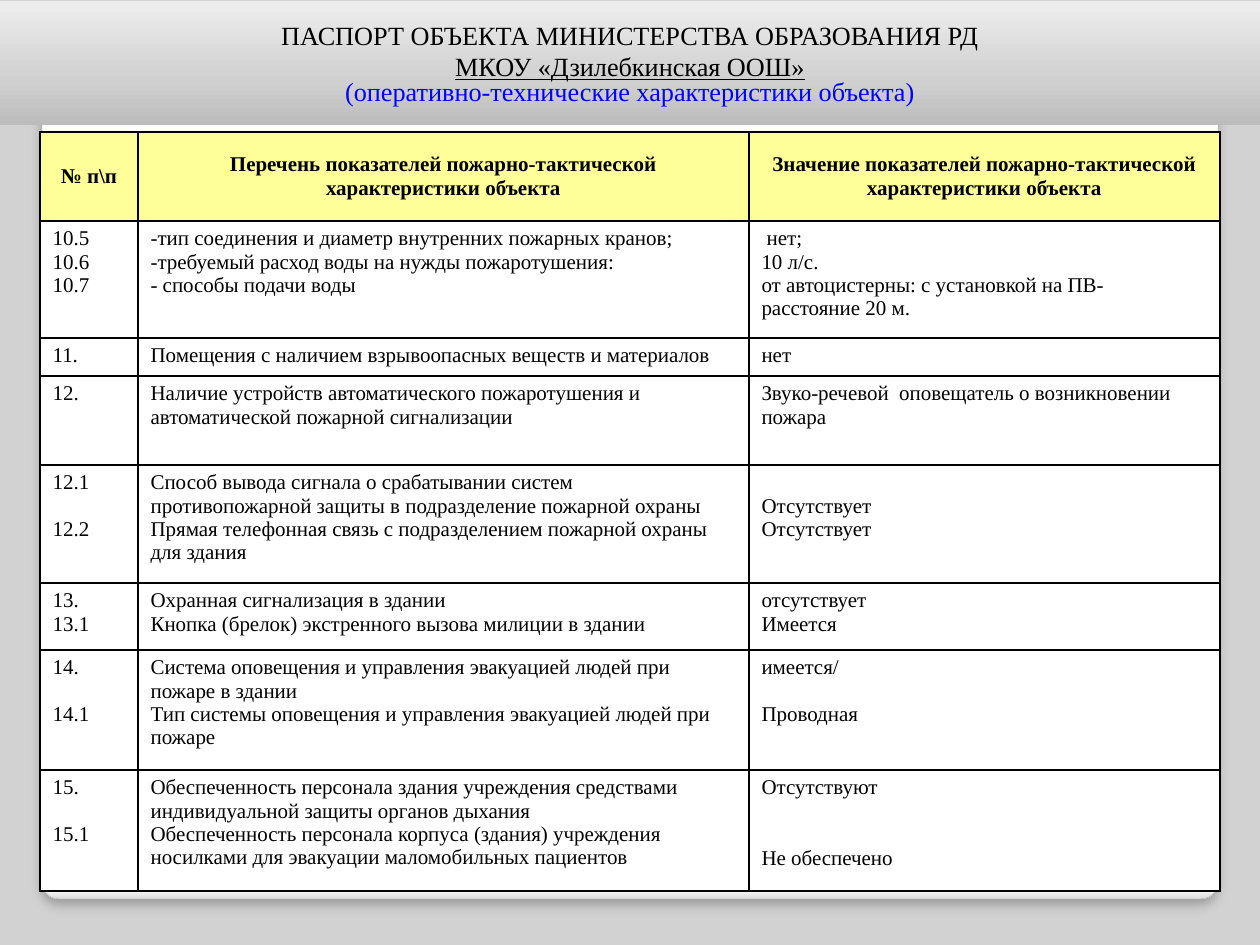
"""Builds the fire-safety passport slide: title banner and table of indicators."""
from lxml import etree
from pptx import Presentation
from pptx import util as u
from pptx.dml.color import RGBColor
from pptx.enum import shapes, text
from pptx.oxml import parse_xml
from pptx.oxml.ns import qn

BLACK = RGBColor(0, 0, 0)
BLUE = RGBColor(0, 0, 255)
WHITE = RGBColor(255, 255, 255)
YELLOW = RGBColor(255, 255, 153)
GREY = RGBColor(210, 210, 210)
EDGE = RGBColor(164, 164, 164)
FONT = "Times New Roman"
NS = 'xmlns:a="http://schemas.openxmlformats.org/drawingml/2006/main"'
BULLET = "•"
GAP = 13.5

TITLE = [
    ("ПАСПОРТ ОБЪЕКТА МИНИСТЕРСТВА ОБРАЗОВАНИЯ РД", BLACK, False, 1.0),
    ("МКОУ «Дзилебкинская ООШ»", BLACK, True, 1.0),
    ("(оперативно-технические характеристики объекта)", BLUE, False, 0.8),
]
COLS = [98, 611, 471]
ROWS = [
    (89, ["№ п\\п"],
     ["Перечень показателей пожарно-тактической характеристики объекта"],
     ["Значение показателей пожарно-тактической характеристики объекта"]),
    (117, ["10.5", "10.6", "10.7"],
     ["-тип соединения и диаметр внутренних пожарных кранов;",
      "•требуемый расход воды на нужды пожаротушения:",
      "• способы подачи воды"],
     [" нет;", "10 л/с.",
      "от автоцистерны: с установкой на ПВ- расстояние 20 м."]),
    (38, ["11."],
     ["Помещения с наличием взрывоопасных веществ и материалов"],
     ["нет"]),
    (89, ["12."],
     ["Наличие устройств автоматического пожаротушения и "
      "автоматической пожарной сигнализации"],
     ["Звуко-речевой  оповещатель о возникновении пожара"]),
    (118, ["12.1", "", "12.2"],
     ["Способ вывода сигнала о срабатывании систем противопожарной "
      "защиты в подразделение пожарной охраны",
      "Прямая телефонная связь с подразделением пожарной охраны для здания"],
     ["", "Отсутствует", "Отсутствует"]),
    (67, ["13.", "13.1"],
     ["Охранная сигнализация в здании",
      "Кнопка (брелок) экстренного вызова милиции в здании"],
     ["отсутствует", "Имеется"]),
    (120, ["14.", "", "14.1"],
     ["Система оповещения и управления эвакуацией людей при пожаре в здании",
      "Тип системы оповещения и управления эвакуацией людей при пожаре"],
     ["имеется/", "", "Проводная"]),
    (121, ["15.", "", "15.1"],
     ["Обеспеченность персонала здания учреждения средствами "
      "индивидуальной защиты органов дыхания",
      "Обеспеченность персонала корпуса (здания) учреждения носилками "
      "для эвакуации маломобильных пациентов"],
     ["Отсутствуют", "", "", "Не обеспечено"]),
]


def px(n):
    return u.Emu(round(n * 914400 / 126))


def add_run(para, words, size, color, bold=False, under=False):
    run = para.add_run()
    run.text = words
    font = run.font
    font.name, font.size, font.bold, font.underline = FONT, u.Pt(size), bold, under
    font.color.rgb = color


def add_box(slide, kind, box, stops, angle):
    shape = slide.shapes.add_shape(kind, *map(px, box))
    shape.shadow.inherit = False
    shape.fill.gradient()
    grad = shape._element.spPr.find(qn("a:gradFill"))
    marks = "".join(f'<a:gs pos="{at * 1000}"><a:srgbClr val="{tone}"/></a:gs>'
                    for at, tone in stops)
    grad.getparent().replace(grad, parse_xml(
        f'<a:gradFill {NS} rotWithShape="1"><a:gsLst>{marks}</a:gsLst>'
        f'<a:lin ang="{angle * 60000}" scaled="0"/></a:gradFill>'))
    return shape


def add_panel(slide):
    stops = [(0, "FFFFFF"), (98, "FFFFFF"), (99, "F7F7F7"), (100, "DADADA")]
    panel = add_box(slide, shapes.MSO_SHAPE.ROUNDED_RECTANGLE,
                    (42, 45, 1176, 854), stops, 90)
    panel.adjustments[0] = 0.02
    panel.line.color.rgb = EDGE
    panel.line.width = u.Pt(0.16)
    panel._element.spPr.find(qn("a:effectLst")).append(parse_xml(
        f'<a:outerShdw {NS} blurRad="{u.Pt(6)}" dist="{u.Pt(4)}" dir="5400000" '
        'rotWithShape="0"><a:srgbClr val="000000"><a:alpha val="25000"/>'
        '</a:srgbClr></a:outerShdw>'))


def add_title(slide):
    stops = [(0, "BCBCBC"), (35, "D0D0D0"), (100, "EDEDED")]
    banner = add_box(slide, shapes.MSO_SHAPE.RECTANGLE, (0, 1, 1260, 124), stops, 270)
    banner.line.fill.background()
    frame = banner.text_frame
    frame.word_wrap = True
    frame.vertical_anchor = text.MSO_ANCHOR.MIDDLE
    for i, (words, color, under, space) in enumerate(TITLE):
        para = frame.add_paragraph() if i else frame.paragraphs[0]
        para.alignment = text.PP_ALIGN.CENTER
        para.line_spacing = space
        add_run(para, words, 15, color, under=under)


def add_borders(cell):
    props = cell._tc.get_or_add_tcPr()
    for i, side in enumerate(("lnL", "lnR", "lnT", "lnB")):
        props.insert(i, parse_xml(
            f'<a:{side} {NS} w="{u.Pt(1)}"><a:solidFill><a:srgbClr val="000000"/>'
            f'</a:solidFill></a:{side}>'))


def fill_cell(cell, lines, head):
    cell.fill.solid()
    cell.fill.fore_color.rgb = YELLOW if head else WHITE
    cell.margin_left = cell.margin_right = u.Inches(0.1)
    cell.margin_top = cell.margin_bottom = u.Inches(0.05)
    cell.vertical_anchor = text.MSO_ANCHOR.MIDDLE if head else text.MSO_ANCHOR.TOP
    add_borders(cell)
    frame, gap, para = cell.text_frame, 0, None
    for line in lines:
        if not line:
            gap += GAP
            continue
        if para is None:
            para = frame.paragraphs[0]
            cell.margin_top += u.Pt(gap)
        else:
            para = frame.add_paragraph()
            para.space_before = u.Pt(gap)
        gap = 0
        para.alignment = text.PP_ALIGN.CENTER if head else text.PP_ALIGN.LEFT
        if line.startswith(BULLET):
            props = para._p.get_or_add_pPr()
            props.set("marL", "0")
            props.set("indent", "0")
            etree.SubElement(props, qn("a:buFont")).set("typeface", FONT)
            etree.SubElement(props, qn("a:buChar")).set("char", "-")
        add_run(para, line.removeprefix(BULLET), 12, BLACK, bold=head)


def add_grid(slide):
    high = sum(row[0] for row in ROWS)
    box = map(px, (40, 132, sum(COLS), high))
    table = slide.shapes.add_table(len(ROWS), len(COLS), *box).table
    table.horz_banding = False
    for col, wide in zip(table.columns, COLS):
        col.width = px(wide)
    for r, (tall, *cells) in enumerate(ROWS):
        table.rows[r].height = px(tall)
        for c, lines in enumerate(cells):
            fill_cell(table.cell(r, c), lines, r == 0)


def main():
    deck = Presentation()
    deck.slide_width, deck.slide_height = px(1260), px(945)
    slide = deck.slides.add_slide(deck.slide_layouts[6])
    slide.background.fill.solid()
    slide.background.fill.fore_color.rgb = GREY
    add_panel(slide)
    add_grid(slide)
    add_title(slide)
    deck.save("out.pptx")


if __name__ == "__main__":
    main()
